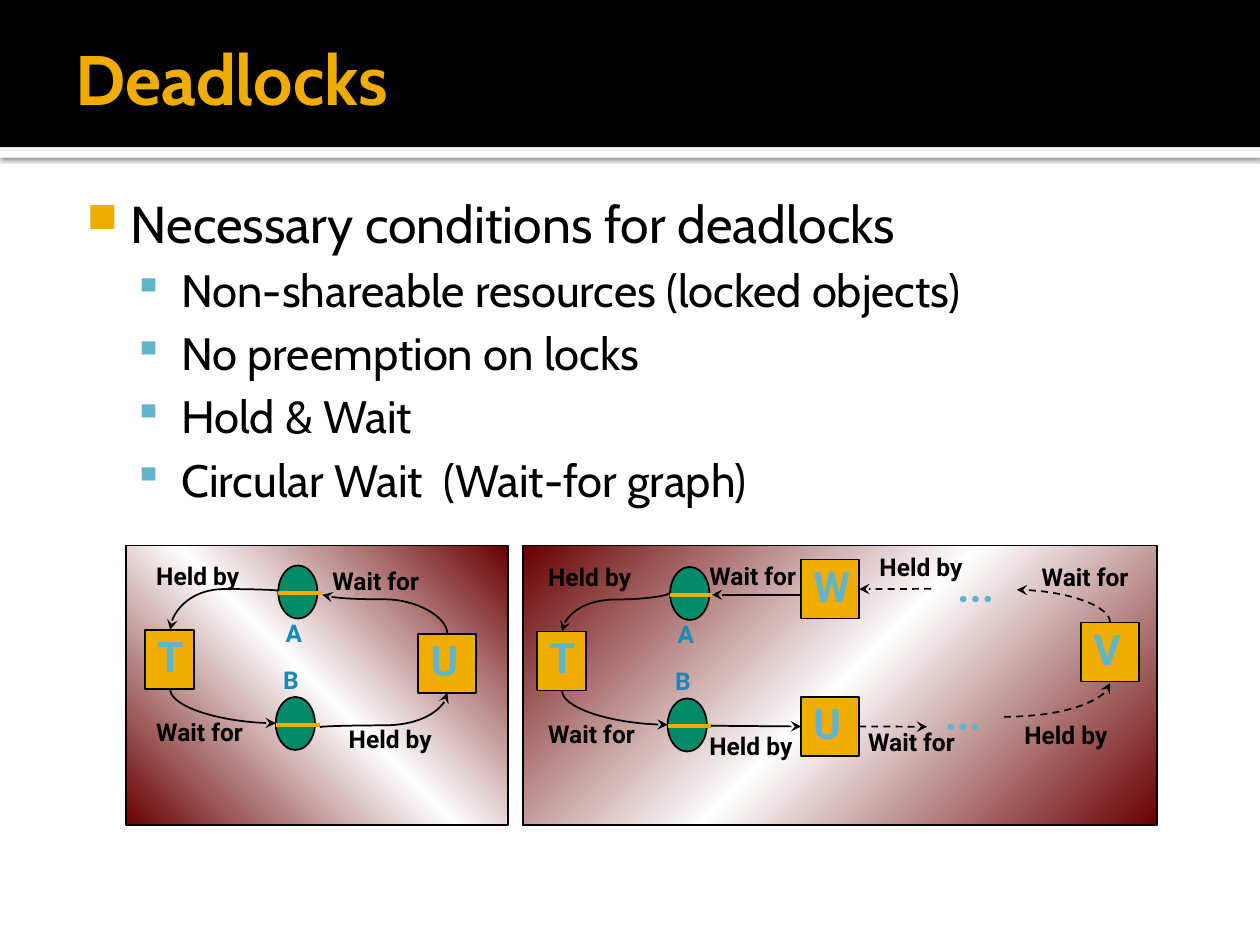
from dataclasses import dataclass

from lxml.etree import SubElement
from pptx import Presentation
from pptx.dml.color import RGBColor
from pptx.enum.dml import MSO_LINE
from pptx.enum.shapes import MSO_CONNECTOR, MSO_SHAPE
from pptx.enum.text import MSO_ANCHOR, MSO_AUTO_SIZE, PP_ALIGN
from pptx.oxml.ns import qn
from pptx.util import Cm, Pt


@dataclass(frozen=True)
class Theme:
    black: str = "000000"
    white: str = "FFFFFF"
    gold: str = "F0AD00"
    blue: str = "60B5CC"
    deep: str = "168BBA"
    green: str = "038A69"
    wine: str = "680000"
    head: str = "Cabin"
    tag: str = "Roboto"
    title: float = 40
    main: float = 29.6
    sub: float = 25.9
    node: float = 24
    note: float = 14


T = Theme()


def rgb(code):
    return RGBColor.from_string(code)


def add(parent, tag, **attrs):
    return SubElement(parent, qn(tag), attrs)


# --- Text ---
def style(par, size, face, color, bold=False):
    font = par.font
    font.size, font.name, font.bold = Pt(size), face, bold
    font.color.rgb = rgb(color)
    par.alignment = PP_ALIGN.LEFT


def pad(frame, left, top, right, low):
    frame.margin_left, frame.margin_top = Cm(left), Cm(top)
    frame.margin_right, frame.margin_bottom = Cm(right), Cm(low)


def write(shape, text, size, color):
    frame = shape.text_frame
    frame.word_wrap = True
    frame.auto_size = MSO_AUTO_SIZE.SHAPE_TO_FIT_TEXT
    frame.vertical_anchor = MSO_ANCHOR.TOP
    par = frame.paragraphs[0]
    par.text = text
    par.line_spacing = 0.9
    style(par, size, T.tag, color, True)


def label(slide, text, x, y, w=2.57, h=0.79, size=T.note, color=T.black):
    box = slide.shapes.add_textbox(Cm(x), Cm(y), Cm(w), Cm(h))
    write(box, text, size, color)


def bullet(par, mark, color, scale, left, hang):
    props = par._p.get_or_add_pPr()
    props.set("marL", str(Cm(left)))
    props.set("indent", str(-Cm(hang)))
    add(add(props, "a:buClr"), "a:srgbClr", val=color)
    add(props, "a:buSzPct", val=str(scale * 1000))
    add(props, "a:buChar", char=mark)


# --- Shapes ---
def block(shapes, x, y, w, h, fill, edge=None, kind=MSO_SHAPE.RECTANGLE):
    shape = shapes.add_shape(kind, Cm(x), Cm(y), Cm(w), Cm(h))
    shape.shadow.inherit = False
    shape.fill.solid()
    shape.fill.fore_color.rgb = rgb(fill)
    if edge:
        shape.line.color.rgb = rgb(edge)
        shape.line.width = Pt(1)
    else:
        shape.line.fill.background()
    return shape


def panel(slide, x, w, angle):
    shape = block(slide.shapes, x, 11, w, 5.64, T.white, T.black)
    shape.fill.gradient()
    grad = shape._element.spPr.find(qn("a:gradFill"))
    for child in list(grad):
        grad.remove(child)
    stops = add(grad, "a:gsLst")
    for pos, color in ((0, T.wine), (50, T.white), (100, T.wine)):
        stop = add(stops, "a:gs", pos=str(pos * 1000))
        add(stop, "a:srgbClr", val=color)
    add(grad, "a:lin", ang=str(angle * 60000), scaled="1")


def node(slide, name, x, y, w=1.17):
    shape = block(slide.shapes, x, y, w, 1.19, T.gold, T.black)
    write(shape, name, T.node, T.blue)
    return shape


def lock(slide, x, y):
    group = slide.shapes.add_group_shape()
    block(group.shapes, x, y, 0.79, 1.07, T.green, T.black, MSO_SHAPE.OVAL)
    bar = group.shapes.add_connector(
        MSO_CONNECTOR.STRAIGHT, Cm(x), Cm(y + 0.56), Cm(x + 0.89), Cm(y + 0.56))
    ink(bar, T.gold, 2.25)


# --- Lines ---
def ink(line, color=T.black, width=1, dash=False, tip=False):
    line.line.color.rgb = rgb(color)
    line.line.width = Pt(width)
    if dash:
        line.line.dash_style = MSO_LINE.DASH
    if tip:
        add(line.line._get_or_add_ln(), "a:tailEnd", type="stealth")
    add(line._element.spPr, "a:effectLst")


def arrow(slide, x1, x2, y, dash=False):
    line = slide.shapes.add_connector(
        MSO_CONNECTOR.STRAIGHT, Cm(x1), Cm(y), Cm(x2), Cm(y))
    ink(line, dash=dash, tip=True)
    return line


def curve(slide, start, end, bend=None, dash=False, steep=True):
    """A steep curve leaves its start up or down: the frame is turned by 90."""
    dx, dy = end[0] - start[0], end[1] - start[1]
    w, h = (abs(dy), abs(dx)) if steep else (abs(dx), abs(dy))
    x, y = (start[0] + end[0] - w) / 2, (start[1] + end[1] - h) / 2
    line = slide.shapes.add_connector(
        MSO_CONNECTOR.CURVE, Cm(x), Cm(y), Cm(x + w), Cm(y + h))
    props = line._element.spPr
    frame, geom = props.find(qn("a:xfrm")), props.find(qn("a:prstGeom"))
    if steep:
        frame.set("rot", str(90 * 60000))
    flips = (dy < 0, dx > 0) if steep else (dx < 0, dy < 0)
    for name, flip in zip(("flipH", "flipV"), flips):
        if flip:
            frame.set(name, "1")
    if bend is None:
        geom.set("prst", "curvedConnector2")
    else:
        guides = geom.find(qn("a:avLst"))
        if guides is None:
            guides = add(geom, "a:avLst")
        add(guides, "a:gd", name="adj1", fmla=f"val {round(bend * 100000)}")
    ink(line, dash=dash, tip=True)


# --- Parts of the slide ---
def header(slide):
    strip = block(slide.shapes, 0, 3.05, 25.4, 0.13, T.white)
    cast = add(strip._element.spPr.find(qn("a:effectLst")), "a:outerShdw",
               blurRad=str(Pt(2.5)), dist=str(Pt(0.8)), dir=str(90 * 60000),
               algn="t", rotWithShape="0")
    add(add(cast, "a:srgbClr", val=T.black), "a:alpha", val="60000")
    block(slide.shapes, 0, 0, 25.4, 2.97, T.black)
    box = slide.shapes.add_textbox(Cm(1.27), Cm(0.2), Cm(22.86), Cm(2.74))
    frame = box.text_frame
    frame.word_wrap = True
    frame.vertical_anchor = MSO_ANCHOR.MIDDLE
    pad(frame, 0.25, 0.13, 0.13, 0.13)
    frame.text = "Deadlocks"
    style(frame.paragraphs[0], T.title, T.head, T.gold, True)


def body(slide):
    box = slide.shapes.add_textbox(Cm(1.27), Cm(3.61), Cm(22.86), Cm(6.35))
    frame = box.text_frame
    frame.word_wrap = True
    pad(frame, 0.15, 0.25, 0.25, 0.13)
    first = frame.paragraphs[0]
    first.text = "Necessary conditions for deadlocks"
    style(first, T.main, T.head, T.black)
    bullet(first, "■", T.gold, 80, 1.22, 0.89)
    for text in (" Non-shareable resources (locked objects)",
                 " No preemption on locks", " Hold & Wait",
                 " Circular Wait  (Wait-for graph)"):
        par = frame.add_paragraph()
        par.text, par.level, par.space_before = text, 1, Pt(5)
        style(par, T.sub, T.head, T.black)
        bullet(par, "▪", T.blue, 90, 2.03, 0.76)


def ring(slide, dx, dy, bend):
    """Node T with locks A and B, the half that both graphs share."""
    node(slide, "T", 2.92 + dx, 12.7 + dy, 0.99)
    lock(slide, 5.56 + dx, 14.05 + dy)
    lock(slide, 5.61 + dx, 11.4 + dy)
    curve(slide, (3.43 + dx, 13.89 + dy), (5.56 + dx, 14.58 + dy))
    curve(slide, (5.61 + dx, 11.91 + dy), (3.43 + dx, 12.7 + dy), bend)
    label(slide, "Held by", 2.9 + dx, 11.25 + dy)
    label(slide, "Wait for", 2.9 + dx, 14.4 + dy)
    label(slide, "A", 5.51 + dx, 12.4 + dy, 0.97, color=T.deep)
    label(slide, "B", 5.46 + dx, 13.34 + dy, 0.97, color=T.deep)


def short(slide):
    ring(slide, 0, 0, -0.045)
    node(slide, "U", 8.43, 12.78)
    curve(slide, (9.02, 12.78), (6.5, 11.99), 0.886)
    curve(slide, (6.45, 14.66), (9.02, 13.97), 0.053)
    label(slide, "Wait for", 6.45, 11.35)
    label(slide, "Held by", 6.78, 14.53)


def long(slide):
    ring(slide, 7.9, 0.03, 0.186)
    u = node(slide, "U", 16.15, 14.05)
    node(slide, "V", 21.79, 12.55)
    w = node(slide, "W", 16.15, 11.28)
    for x, y in ((18.8, 13.87), (19.05, 11.28)):
        label(slide, "...", x, y, 1.45, 1.17, T.node, T.blue)
    arrow(slide, 14.33, 16.15, 14.63).end_connect(u, 1)
    arrow(slide, 16.15, 14.35, 11.99)
    arrow(slide, 17.32, 18.69, 14.65, True).begin_connect(u, 3)
    arrow(slide, 18.77, 17.32, 11.87, True).end_connect(w, 3)
    curve(slide, (20.24, 14.45), (22.38, 13.77), dash=True, steep=False)
    curve(slide, (22.38, 12.55), (20.5, 11.89), dash=True)
    for text, x, y in (("Wait for", 14.05, 11.25), ("Held by", 14.05, 14.68),
                       ("Wait for", 17.25, 14.6), ("Wait for", 20.75, 11.28),
                       ("Held by", 17.48, 11.07), ("Held by", 20.4, 14.45)):
        label(slide, text, x, y)


def main():
    deck = Presentation()
    deck.slide_width, deck.slide_height = Cm(25.4), Cm(19.05)
    slide = deck.slides.add_slide(deck.slide_layouts[6])
    header(slide)
    panel(slide, 10.54, 12.78, 45)
    panel(slide, 2.54, 7.7, 315)
    body(slide)
    short(slide)
    long(slide)
    deck.save("out.pptx")


if __name__ == "__main__":
    main()
